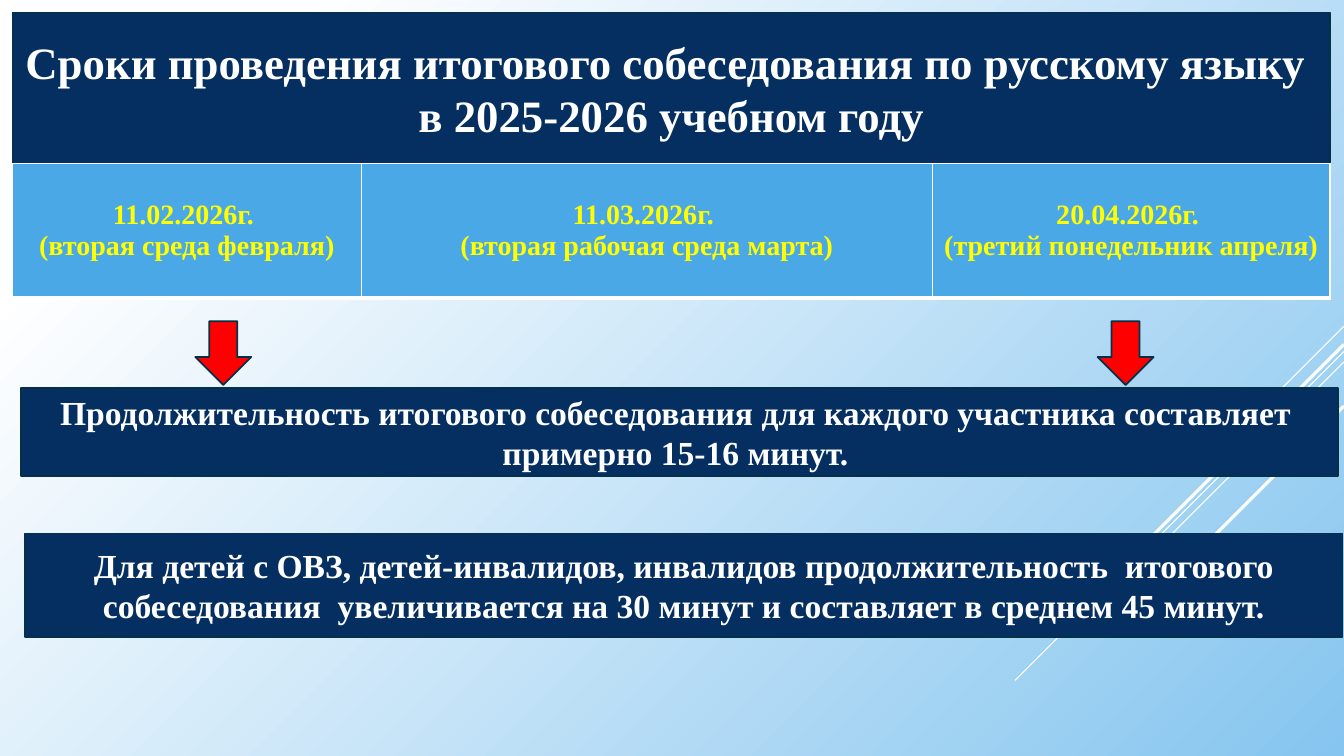
from lxml.etree import SubElement
from pptx import Presentation
from pptx.dml.color import RGBColor
from pptx.enum.shapes import MSO_CONNECTOR, MSO_SHAPE
from pptx.enum.text import MSO_ANCHOR, PP_ALIGN
from pptx.oxml import parse_xml
from pptx.oxml.ns import nsdecls, qn
from pptx.util import Pt

COLORS = {"white": "FFFFFF", "sky": "86C5EF", "navy": "052F61", "edge": "043148",
          "blue": "4AA8E7", "yellow": "FFFF00", "red": "FF0000"}


def write(frame, text, size, color):
    frame.text = text
    for para in frame.paragraphs:
        para.alignment = PP_ALIGN.CENTER
        for run in para.runs:
            run.font.name = "Times New Roman"
            run.font.size = Pt(size)
            run.font.bold = True
            run.font.color.rgb = RGBColor.from_string(COLORS[color])


def block(kind, left, top, width, height, color):
    shape = slide.shapes.add_shape(kind, Pt(left), Pt(top), Pt(width), Pt(height))
    shape.shadow.inherit = False
    shape.fill.solid()
    shape.fill.fore_color.rgb = RGBColor.from_string(COLORS[color])
    shape.line.color.rgb = RGBColor.from_string(COLORS["edge"])
    shape.line.width = Pt(1.25)
    return shape


deck = Presentation()
deck.slide_width, deck.slide_height = Pt(960), Pt(540)
slide = deck.slides.add_slide(deck.slide_layouts[6])

back = slide.background.fill
back.gradient()
back.gradient_angle = 315
for stop, place, color in zip(back.gradient_stops, (0.14, 1), ("white", "sky")):
    stop.position = place
    stop.color.rgb = RGBColor.from_string(COLORS[color])

rays = [(233, 72, 0.75), (251, 235, 0.75), (258.5, 149, 0.75),
        (246, 137.5, 2.25), (290, 100, 2.25)]
for top, run, weight in rays:
    ray = slide.shapes.add_connector(
        MSO_CONNECTOR.STRAIGHT, Pt(960), Pt(top), Pt(960 - run), Pt(top + run))
    ray.line.color.rgb = RGBColor.from_string(COLORS["white"])
    ray.line.width = Pt(weight)
    SubElement(ray._element.spPr, qn("a:effectLst"))

panels = [
    (9, 9, 108, 32, "Сроки проведения итогового собеседования по русскому языку \n"
                    "в 2025-2026 учебном году"),
    (15, 277, 63, 24, "Продолжительность итогового собеседования для каждого участника составляет \n"
                      "примерно 15-16 минут. "),
    (18, 381, 74, 24, "Для детей с ОВЗ, детей-инвалидов, инвалидов продолжительность  итогового "
                      "собеседования  увеличивается на 30 минут и составляет в среднем 45 минут."),
]
for left, top, height, size, text in panels:
    panel = block(MSO_SHAPE.FLOWCHART_PROCESS, left, top, 941, height, "navy")
    panel.text_frame.word_wrap = True
    panel.text_frame.vertical_anchor = MSO_ANCHOR.MIDDLE
    write(panel.text_frame, text, size, "white")

dates = [(249, "11.02.2026г. \n(вторая среда февраля)"),
         (408, "11.03.2026г. \n(вторая рабочая среда марта)"),
         (284, "20.04.2026г. \n(третий понедельник апреля)")]
table = slide.shapes.add_table(1, 3, Pt(9), Pt(116.5), Pt(941), Pt(96.5)).table
for index, (width, text) in enumerate(dates):
    table.columns[index].width = Pt(width)
    cell = table.cell(0, index)
    cell.vertical_anchor = MSO_ANCHOR.MIDDLE
    write(cell.text_frame, text, 20, "yellow")
    props = cell._tc.get_or_add_tcPr()
    for side, weight in (("L", 1), ("R", 1), ("T", 1), ("B", 3)):
        props.append(parse_xml(
            f'<a:ln{side} {nsdecls("a")} w="{Pt(weight)}"><a:solidFill>'
            f'<a:srgbClr val="{COLORS["white"]}"/></a:solidFill></a:ln{side}>'))
    cell.fill.solid()
    cell.fill.fore_color.rgb = RGBColor.from_string(COLORS["blue"])

for left in (139.5, 784):
    block(MSO_SHAPE.DOWN_ARROW, left, 229.5, 40, 45.5, "red")

deck.save("out.pptx")
